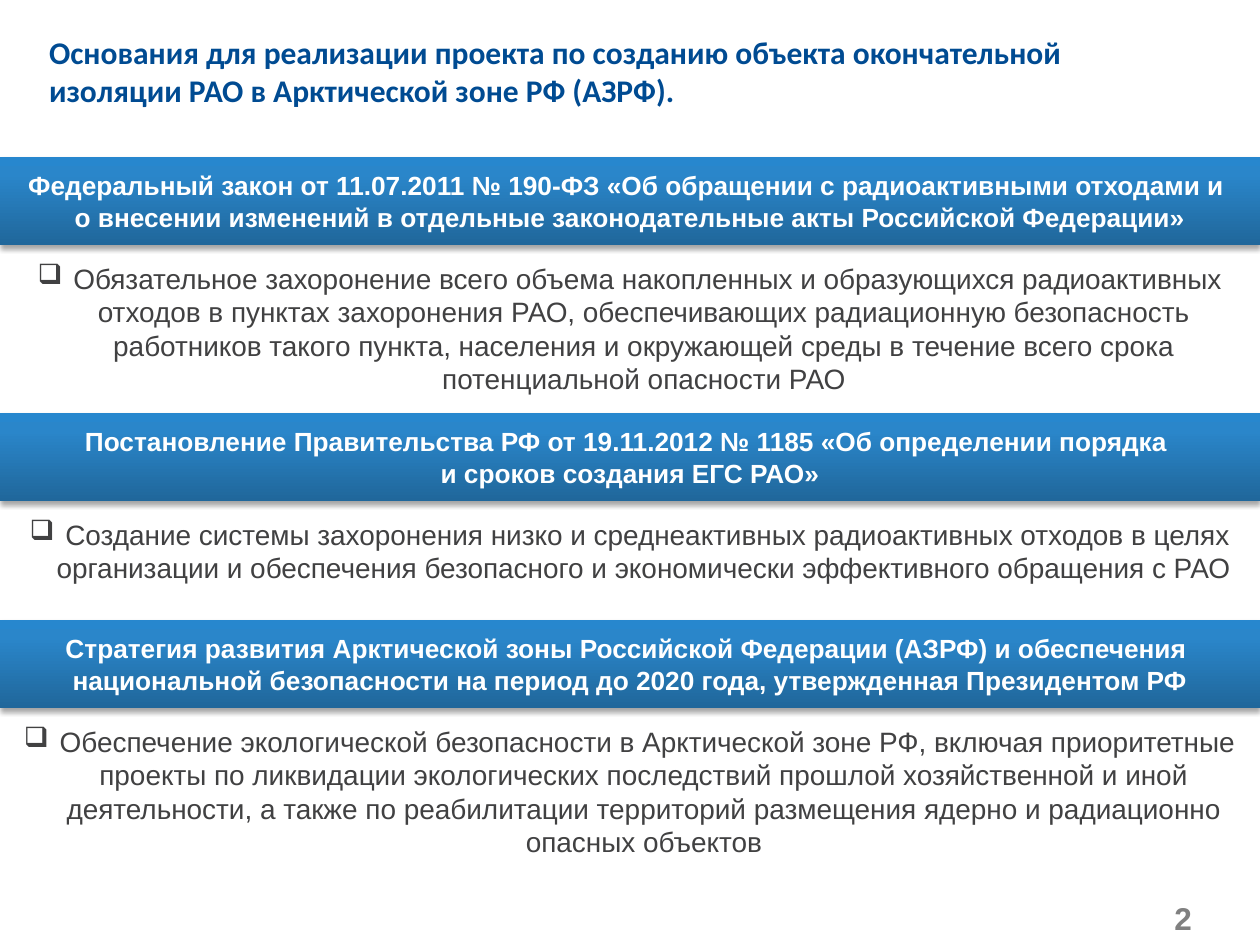
from pptx import Presentation
from pptx import oxml, util as u
from pptx.dml.color import RGBColor
from pptx.enum import shapes, text
from pptx.oxml import ns

PX = 914400 / 126
NAVY = RGBColor(0x00, 0x4B, 0x92)
WHITE = RGBColor(0xFF, 0xFF, 0xFF)
DARK = RGBColor(0x41, 0x41, 0x42)
GRAY = RGBColor(0x80, 0x80, 0x80)
SHADOW = RGBColor(0x00, 0x00, 0x00)
GRADIENT = [
    (0, RGBColor(0x20, 0x67, 0x9B)),
    (80, RGBColor(0x2A, 0x86, 0xCA)),
    (100, RGBColor(0x27, 0x87, 0xCE)),
]

TITLE_FONT = {"name": "Calibri", "size": u.Pt(18), "bold": True}
BANNER_FONT = {"name": "Arial", "size": u.Pt(15), "bold": True}
BODY_FONT = {"name": "Arial", "size": u.Pt(16), "bold": False}
NUMBER_FONT = {"name": "Arial", "size": u.Pt(18), "bold": True}

SLIDE_WIDTH, SLIDE_HEIGHT = 1260, 945
BANNER_HEIGHT = 88
BODY_OFFSET = 98
BULLET_INDENT = 28

TITLE = (
    "Основания для реализации проекта по созданию объекта окончательной "
    "изоляции РАО в Арктической зоне РФ (АЗРФ)."
)
SECTIONS = [
    (157, 149, (3, 3), [
        "Федеральный закон от 11.07.2011 №\u00a0190-ФЗ «Об обращении с радиоактивными отходами и ",
        "о внесении изменений в отдельные законодательные акты Российской Федерации»",
    ], " Обязательное захоронение всего объема накопленных и образующихся радиоактивных "
       "отходов в пунктах захоронения РАО, обеспечивающих радиационную безопасность "
       "работников такого пункта, населения и окружающей среды в течение всего срока "
       "потенциальной опасности РАО"),
    (413, 81, (11, 5), [
        "Постановление Правительства РФ от 19.11.2012 № 1185 «Об определении порядка ",
        "и сроков создания ЕГС РАО»",
    ], " Создание системы захоронения низко и среднеактивных радиоактивных отходов в целях "
       "организации и обеспечения безопасного и экономически эффективного обращения с РАО"),
    (620, 149, (11, 5), [
        "Стратегия развития Арктической зоны Российской Федерации (АЗРФ) и обеспечения ",
        "национальной безопасности на период до 2020 года, утвержденная Президентом РФ",
    ], " Обеспечение экологической безопасности в Арктической зоне РФ, включая приоритетные "
       "проекты по ликвидации экологических последствий прошлой хозяйственной и иной "
       "деятельности, а также по реабилитации территорий размещения ядерно и радиационно "
       "опасных объектов"),
]


def px(length):
    return u.Emu(round(length * PX))


def box(*lengths):
    return [px(length) for length in lengths]


def set_attributes(target, values):
    for name, value in values.items():
        setattr(target, name, value)


def margins(horizontal, vertical):
    return {
        "margin_left": px(horizontal),
        "margin_right": px(horizontal),
        "margin_top": px(vertical),
        "margin_bottom": px(vertical),
    }


def write_lines(frame, lines, font, color, alignment):
    for index, line in enumerate(lines):
        paragraph = frame.paragraphs[0] if index == 0 else frame.add_paragraph()
        paragraph.alignment = alignment
        run = paragraph.add_run()
        run.text = line
        set_attributes(run.font, font)
        run.font.color.rgb = color


def add_title(slide):
    title = slide.shapes.title
    left, top, width, height = box(49, 5, 1081, 132)
    set_attributes(title, {"left": left, "top": top, "width": width, "height": height})
    set_attributes(title.text_frame, {
        **margins(0, 0),
        "word_wrap": True,
        "auto_size": text.MSO_AUTO_SIZE.NONE,
        "vertical_anchor": text.MSO_ANCHOR.MIDDLE,
    })
    write_lines(title.text_frame, [TITLE], TITLE_FONT, NAVY, text.PP_ALIGN.LEFT)


def fill_gradient(shape):
    shape.fill.gradient()
    shape.fill.gradient_angle = 90
    stops = "".join(
        f'<a:gs pos="{position * 1000}"><a:srgbClr val="{color}"/></a:gs>'
        for position, color in GRADIENT
    )
    stop_list = shape.element.spPr.find(".//" + ns.qn("a:gsLst"))
    stop_list.getparent().replace(
        stop_list, oxml.parse_xml(f'<a:gsLst {ns.nsdecls("a")}>{stops}</a:gsLst>')
    )


def add_shadow(shape):
    shape.shadow.inherit = False
    effects = shape.element.spPr.find(ns.qn("a:effectLst"))
    effects.append(oxml.parse_xml(
        f'<a:outerShdw {ns.nsdecls("a")} blurRad="{u.Pt(3.1)}" dist="{u.Pt(1.8)}" '
        f'dir="5400000" rotWithShape="0"><a:srgbClr val="{SHADOW}">'
        '<a:alpha val="35000"/></a:srgbClr></a:outerShdw>'
    ))


def add_banner(slide, top, insets, lines):
    banner = slide.shapes.add_shape(
        shapes.MSO_SHAPE.RECTANGLE, *box(0, top, SLIDE_WIDTH, BANNER_HEIGHT)
    )
    fill_gradient(banner)
    banner.line.fill.background()
    add_shadow(banner)
    set_attributes(banner.text_frame, {
        **margins(*insets),
        "word_wrap": False,
        "vertical_anchor": text.MSO_ANCHOR.MIDDLE,
    })
    write_lines(banner.text_frame, lines, BANNER_FONT, WHITE, text.PP_ALIGN.CENTER)


def add_bullet(paragraph):
    properties = paragraph._p.get_or_add_pPr()
    properties.set("marL", str(px(BULLET_INDENT)))
    properties.set("indent", str(-px(BULLET_INDENT)))
    properties.append(oxml.parse_xml(f'<a:buChar {ns.nsdecls("a")} char="❑"/>'))


def add_body(slide, top, height, line):
    frame = slide.shapes.add_textbox(*box(0, top, SLIDE_WIDTH, height)).text_frame
    set_attributes(frame, {
        "word_wrap": True,
        "auto_size": text.MSO_AUTO_SIZE.SHAPE_TO_FIT_TEXT,
    })
    add_bullet(frame.paragraphs[0])
    write_lines(frame, [line], BODY_FONT, DARK, text.PP_ALIGN.CENTER)


def add_page_number(slide, number):
    frame = slide.shapes.add_textbox(*box(1162, 893, 87, 52)).text_frame
    frame.word_wrap = True
    write_lines(frame, [number], NUMBER_FONT, GRAY, text.PP_ALIGN.LEFT)


def main():
    presentation = Presentation()
    set_attributes(presentation, {
        "slide_width": px(SLIDE_WIDTH),
        "slide_height": px(SLIDE_HEIGHT),
    })
    slide = presentation.slides.add_slide(presentation.slide_layouts[5])
    add_title(slide)
    for top, body_height, insets, heading, body in SECTIONS:
        add_banner(slide, top, insets, heading)
        add_body(slide, top + BODY_OFFSET, body_height, body)
    add_page_number(slide, "2")
    presentation.save("out.pptx")


if __name__ == "__main__":
    main()
